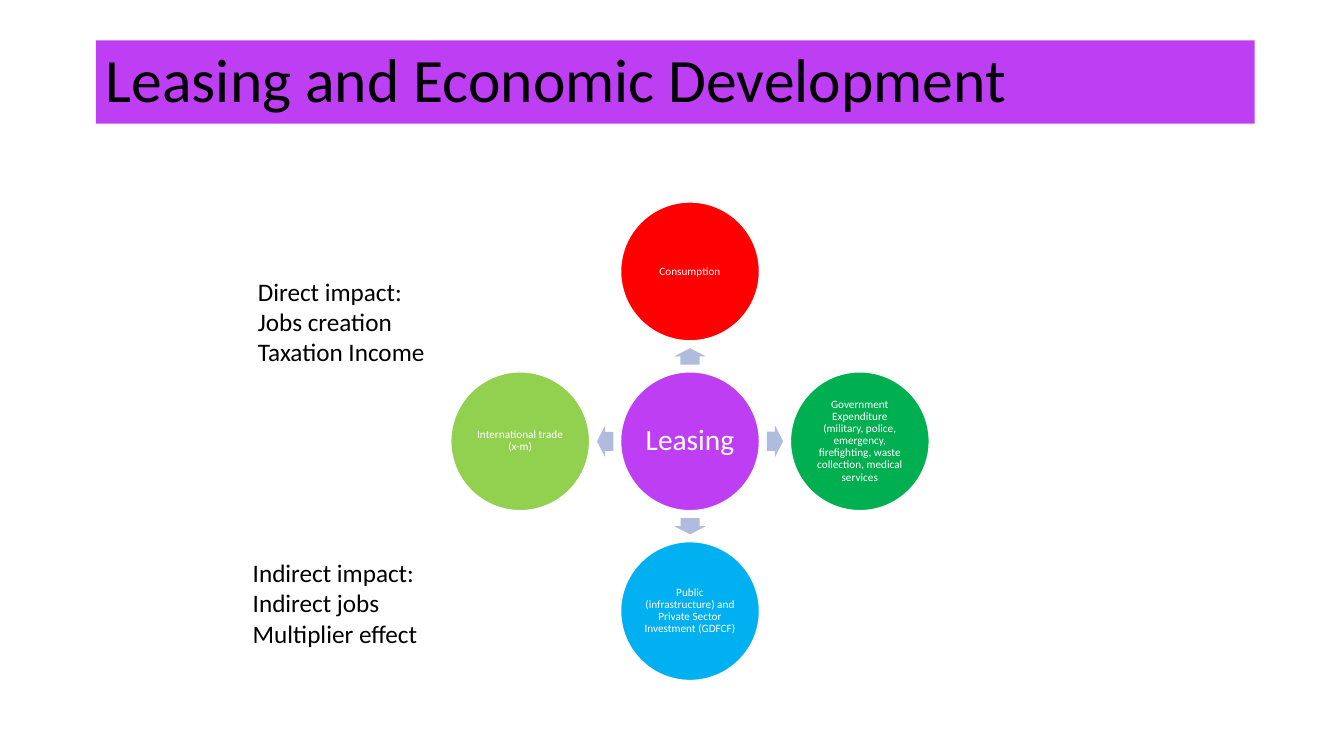
from pptx import Presentation
from pptx.dml.color import RGBColor
from pptx.enum.shapes import MSO_SHAPE as Shape
from pptx.enum.text import MSO_ANCHOR as Anchor, MSO_AUTO_SIZE as AutoSize, PP_ALIGN as Align
from pptx.util import Cm, Pt

PURPLE, WHITE, BLACK, ARROW = "BE3EF4", "FFFFFF", "000000", "B0BCDE"
HUB_X, HUB_Y = 17.39, 11.12
SPOKE = 4.28
DIAMETER = 3.5
ARROW_WIDTH, ARROW_HEIGHT = 0.41, 0.8

# Direction from the hub (x, y), arrow rotation, fill, label
SECTORS = [
    (0, -1, 270, "FF0000", "Consumption"),
    (1, 0, 0, "00B050", "Government Expenditure (military, police, emergency, "
                        "firefighting, waste collection, medical services"),
    (0, 1, 90, "00B0F0", "Public (infrastructure) and Private Sector Investment (GDFCF)"),
    (-1, 0, 180, "92D050", "International trade (x-m)"),
]

IMPACTS = [
    (6.25, 6.83, 3.33, "Direct impact:\nJobs creation\nTaxation Income"),
    (6.12, 13.92, 2.57, "Indirect impact:\nIndirect jobs\nMultiplier effect"),
]


def color(value):
    return RGBColor.from_string(value)


class Page:
    font = "Calibri"

    def __init__(self, deck):
        self.shapes = deck.slides.add_slide(deck.slide_layouts[6]).shapes

    def label(self, box, text, size, ink, align=Align.LEFT, spacing=1.0):
        """Fill a shape with styled text and return its text frame."""
        frame = box.text_frame
        frame.text = text
        for para in frame.paragraphs:
            para.alignment = align
            para.line_spacing = spacing
            para.font.name = self.font
            para.font.size = Pt(size)
            para.font.color.rgb = color(ink)
        return frame

    def block(self, kind, left, top, width, height, fill):
        """Add a filled preset shape without outline or shadow."""
        box = self.shapes.add_shape(kind, Cm(left), Cm(top), Cm(width), Cm(height))
        box.shadow.inherit = False
        box.fill.solid()
        box.fill.fore_color.rgb = color(fill)
        box.line.fill.background()
        return box

    def title(self, text):
        bar = self.block(Shape.RECTANGLE, 2.42, 1.02, 29.2, 2.1, PURPLE)
        frame = self.label(bar, text, 44, BLACK, spacing=0.9)
        frame.vertical_anchor = Anchor.MIDDLE

    def circle(self, x, y, fill, text, size, inset):
        """Add a labelled circle centred on x, y."""
        radius = DIAMETER / 2
        disc = self.block(Shape.OVAL, x - radius, y - radius, DIAMETER, DIAMETER, fill)
        disc.line.color.rgb = color(WHITE)
        disc.line.width = Pt(1)
        frame = self.label(disc, text, size, WHITE, Align.CENTER, 0.9)
        frame.word_wrap = True
        frame.vertical_anchor = Anchor.MIDDLE
        frame.margin_left = frame.margin_right = Cm(inset)
        frame.margin_top = frame.margin_bottom = Cm(inset)

    def arrow(self, x, y, rotation):
        """Add a block arrow centred on x, y."""
        pointer = self.block(Shape.RIGHT_ARROW, x - ARROW_WIDTH / 2, y - ARROW_HEIGHT / 2,
                             ARROW_WIDTH, ARROW_HEIGHT, ARROW)
        pointer.adjustments[0] = 0.6
        pointer.adjustments[1] = 0.5
        pointer.rotation = rotation

    def note(self, left, top, height, text):
        box = self.shapes.add_textbox(Cm(left), Cm(top), Cm(4.75), Cm(height))
        frame = self.label(box, text, 18, BLACK)
        frame.word_wrap = False
        frame.auto_size = AutoSize.SHAPE_TO_FIT_TEXT


def main():
    deck = Presentation()
    deck.slide_width, deck.slide_height = Cm(33.87), Cm(19.05)
    page = Page(deck)
    page.title("Leasing and Economic Development")
    page.circle(HUB_X, HUB_Y, PURPLE, "Leasing", 21, 0.08)
    for across, down, rotation, fill, text in SECTORS:
        page.arrow(HUB_X + across * SPOKE / 2, HUB_Y + down * SPOKE / 2, rotation)
        page.circle(HUB_X + across * SPOKE, HUB_Y + down * SPOKE, fill, text, 8, 0.03)
    for impact in IMPACTS:
        page.note(*impact)
    deck.save("out.pptx")


if __name__ == "__main__":
    main()
